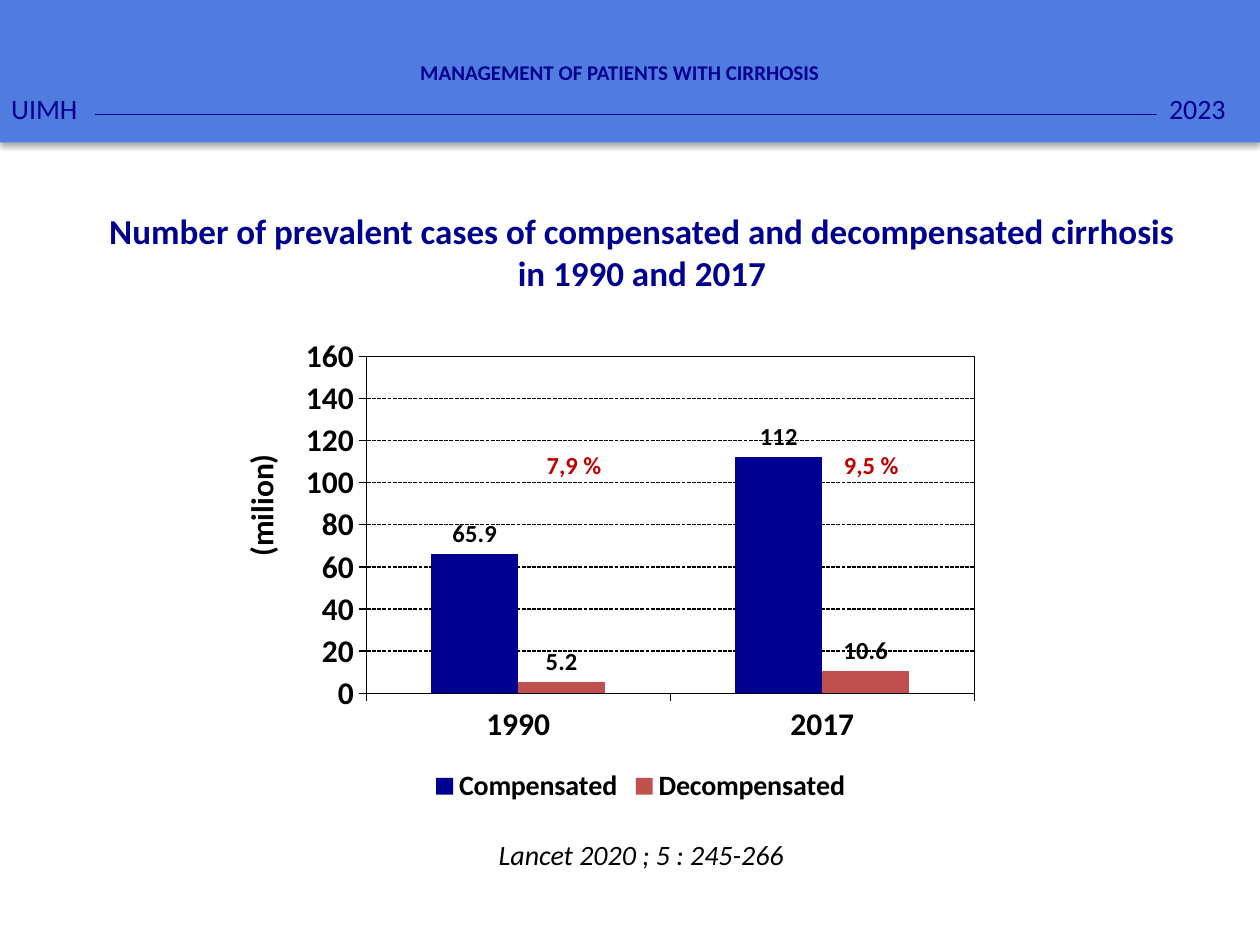
from dataclasses import dataclass

from lxml.etree import SubElement
from pptx import Presentation
from pptx.chart.data import CategoryChartData
from pptx.dml.color import RGBColor
from pptx.enum.chart import XL_CHART_TYPE, XL_LABEL_POSITION, XL_LEGEND_POSITION, XL_TICK_MARK
from pptx.enum.dml import MSO_LINE
from pptx.enum.shapes import MSO_CONNECTOR, MSO_SHAPE
from pptx.enum.text import MSO_ANCHOR, PP_ALIGN
from pptx.oxml import parse_xml
from pptx.oxml.ns import nsdecls, qn
from pptx.util import Inches, Pt


@dataclass(frozen=True)
class Theme:
    font: str = "Calibri"
    navy: str = "000090"
    band: str = "507CDF"
    brick: str = "C0504D"
    red: str = "C00000"
    black: str = "000000"
    heading: int = 20
    axis: int = 18
    body: int = 16
    label: int = 14
    header: int = 12
    hairline: float = 0.75


THEME = Theme()


def rgb(value):
    return RGBColor.from_string(value)


def style_font(font, size, color, bold=False, italic=False):
    font.name = THEME.font
    font.size = Pt(size)
    font.bold = bold
    font.italic = italic
    font.color.rgb = rgb(color)


def style_line(line, color):
    line.color.rgb = rgb(color)
    line.width = Pt(THEME.hairline)


def write(frame, text, size, color, align=PP_ALIGN.CENTER, anchor=MSO_ANCHOR.TOP,
          wrap=True, **emphasis):
    frame.word_wrap = wrap
    frame.vertical_anchor = anchor
    paragraph = frame.paragraphs[0]
    paragraph.text = text
    paragraph.alignment = align
    style_font(paragraph.font, size, color, **emphasis)


def add_text(slide, box, text, size, color, **options):
    caption = slide.shapes.add_textbox(*map(Inches, box))
    write(caption.text_frame, text, size, color, **options)
    return caption


def add_band(slide, box):
    band = slide.shapes.add_shape(MSO_SHAPE.RECTANGLE, *map(Inches, box))
    band.shadow.inherit = False
    band.fill.solid()
    band.fill.fore_color.rgb = rgb(THEME.band)
    band.line.fill.background()
    return band


def add_drop_shadow(band):
    effects = band._element.spPr.find(qn("a:effectLst"))
    effects.append(parse_xml(
        f'<a:outerShdw {nsdecls("a")} blurRad="{Pt(3.1)}" dist="{Pt(1.8)}" dir="5400000" '
        'rotWithShape="0"><a:srgbClr val="000000"><a:alpha val="35000"/></a:srgbClr>'
        '</a:outerShdw>'))


def add_rule(slide, left, right, y):
    rule = slide.shapes.add_connector(
        MSO_CONNECTOR.STRAIGHT, Inches(left), Inches(y), Inches(right), Inches(y))
    style_line(rule.line, THEME.navy)
    SubElement(rule._element.spPr, qn("a:effectLst"))


def add_header(slide):
    add_drop_shadow(add_band(slide, (0, -0.03, 10, 1.16)))
    add_rule(slide, 0.75, 9.18, 0.91)
    running_title = add_band(slide, (0.67, 0, 8.5, 0.72))
    write(running_title.text_frame, "MANAGEMENT OF PATIENTS WITH CIRRHOSIS",
          THEME.header, THEME.navy, anchor=MSO_ANCHOR.BOTTOM, bold=True)
    for left, width, text in ((-0.01, 0.73, "UIMH"), (9.18, 0.82, "2023")):
        corner = add_band(slide, (left, 0.68, width, 0.37))
        write(corner.text_frame, text, THEME.body, THEME.navy, align=PP_ALIGN.LEFT)


def set_title(slide, text):
    title = slide.shapes.title
    title.left, title.top, title.width, title.height = map(Inches, (0.67, 1.61, 8.85, 0.77))
    write(title.text_frame, text, THEME.heading, THEME.navy, bold=True)


def style_axis(axis):
    axis.major_tick_mark = XL_TICK_MARK.OUTSIDE
    axis.minor_tick_mark = XL_TICK_MARK.NONE
    style_font(axis.tick_labels.font, THEME.axis, THEME.black, bold=True)
    style_line(axis.format.line, THEME.black)


def frame_plot_area(chart, x, y, w, h):
    plot_area = chart._chartSpace.chart.plotArea
    for old_layout in plot_area.findall(qn("c:layout")):
        plot_area.remove(old_layout)
    shares = "".join(f'<c:{key} val="{share}"/>'
                     for key, share in zip("xywh", (x, y, w, h)))
    plot_area.insert(0, parse_xml(
        f'<c:layout {nsdecls("c")}><c:manualLayout><c:layoutTarget val="inner"/>'
        f'<c:xMode val="edge"/><c:yMode val="edge"/>{shares}</c:manualLayout></c:layout>'))
    plot_area.append(parse_xml(
        f'<c:spPr {nsdecls("c", "a")}><a:noFill/><a:ln w="{Pt(THEME.hairline)}"><a:solidFill>'
        f'<a:srgbClr val="{THEME.black}"/></a:solidFill></a:ln></c:spPr>'))


def add_cases_chart(slide):
    cases = CategoryChartData()
    cases.categories = ["1990", "2017"]
    cases.add_series("Compensated", (65.9, 112))
    cases.add_series("Decompensated", (5.2, 10.6))
    chart = slide.shapes.add_chart(
        XL_CHART_TYPE.COLUMN_CLUSTERED, *map(Inches, (2.32, 2.6, 5.53, 3.82)), cases).chart
    chart.has_title = False
    style_font(chart.font, THEME.axis, THEME.black)
    chart.has_legend = True
    chart.legend.position = XL_LEGEND_POSITION.BOTTOM
    chart.legend.include_in_layout = False
    style_font(chart.legend.font, THEME.body, THEME.black, bold=True)

    style_axis(chart.category_axis)
    counts = chart.value_axis
    style_axis(counts)
    counts.minimum_scale, counts.maximum_scale, counts.major_unit = 0, 160, 20
    counts.has_major_gridlines = True
    style_line(counts.major_gridlines.format.line, THEME.black)
    counts.major_gridlines.format.line.dash_style = MSO_LINE.SQUARE_DOT

    columns = chart.plots[0]
    columns.vary_by_categories = False
    columns.gap_width = 150
    columns.overlap = 0
    for series, color in zip(columns.series, (THEME.navy, THEME.brick)):
        series.invert_if_negative = False
        series.format.fill.solid()
        series.format.fill.fore_color.rgb = rgb(color)
        labels = series.data_labels
        labels.show_value = True
        labels.position = XL_LABEL_POSITION.OUTSIDE_END
        style_font(labels.font, THEME.label, THEME.black, bold=True)
    frame_plot_area(chart, 0.106, 0.06, 0.873, 0.7)


def main():
    deck = Presentation()
    deck.slide_width, deck.slide_height = Inches(10), Inches(7.5)
    slide = deck.slides.add_slide(deck.slide_layouts[5])
    set_title(slide, "Number of prevalent cases of compensated and decompensated "
                     "cirrhosis in 1990 and 2017")
    add_cases_chart(slide)
    unit = add_text(slide, (1.29, 3.81, 1.56, 0.4), "(milion)", THEME.axis, THEME.black,
                    bold=True)
    unit.rotation = 270
    add_text(slide, (0.32, 6.6, 9.54, 0.37), "Lancet 2020 ; 5 : 245-266",
             THEME.body, THEME.black, italic=True)
    add_header(slide)
    for left, share in ((4.24, "7,9 %"), (6.6, "9,5 %")):
        add_text(slide, (left, 3.52, 0.64, 0.34), share, THEME.label, THEME.red,
                 align=PP_ALIGN.LEFT, wrap=False, bold=True)
    deck.save("out.pptx")


if __name__ == "__main__":
    main()
